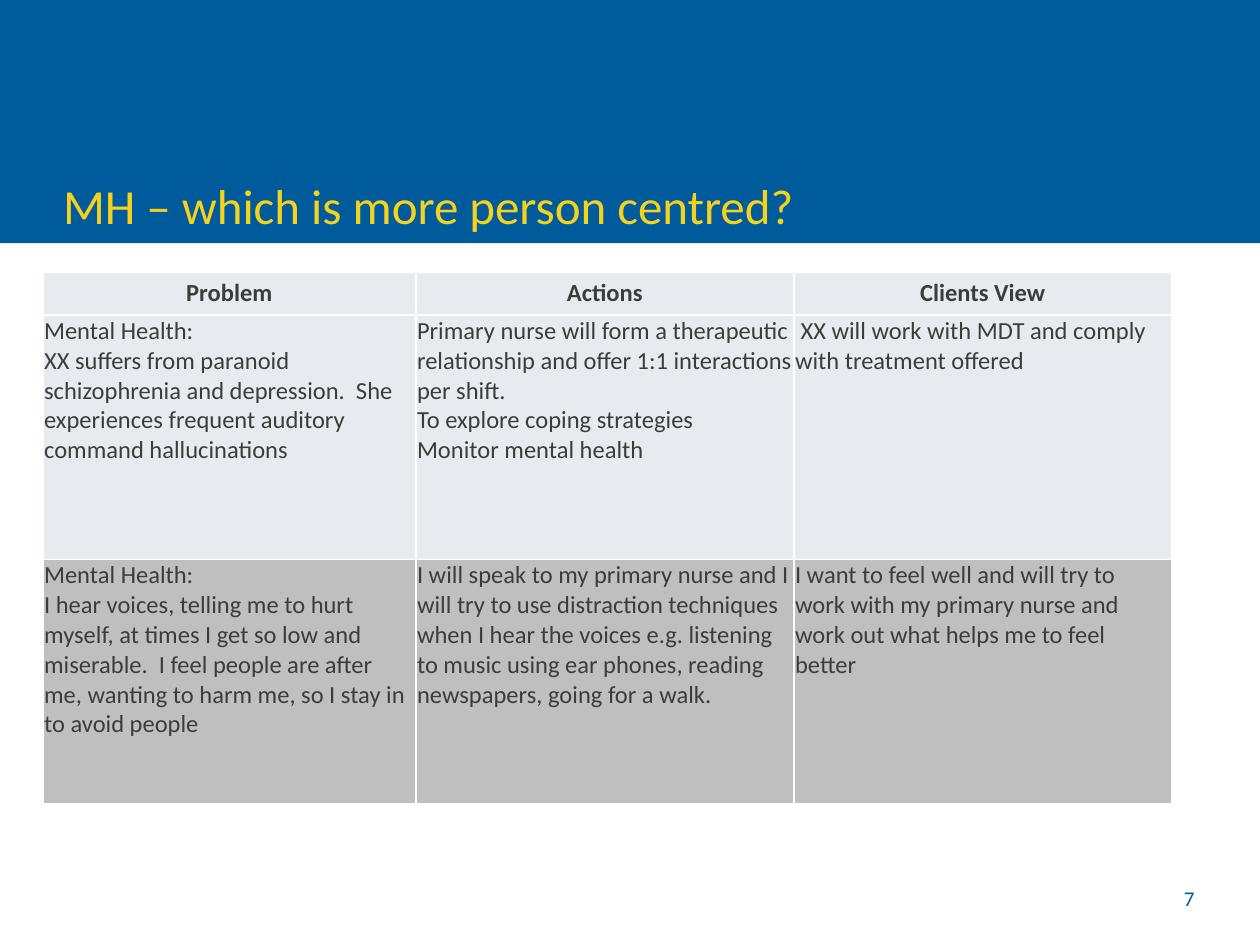
import pptx
import pptx.dml.color
import pptx.enum.shapes
import pptx.enum.text
import pptx.oxml
import pptx.util
from pptx.oxml.ns import nsdecls

Inches = pptx.util.Inches
Align = pptx.enum.text.PP_ALIGN
Anchor = pptx.enum.text.MSO_ANCHOR

BLUE, YELLOW, DARK, WHITE = "005B9C", "F6D21C", "3C3C3B", "FFFFFF"
PALE, GREY = "E7EAEF", "BFBFBF"

TITLE = "MH – which is more person centred?"
PAGE = "7"
HEADS = ["Problem", "Actions", "Clients View"]
CLINIC = [
    ["Mental Health:",
     "XX suffers from paranoid schizophrenia and depression.  She experiences "
     "frequent auditory command hallucinations"],
    ["Primary nurse will form a therapeutic relationship and offer 1:1 "
     "interactions per shift.",
     "To explore coping strategies",
     "Monitor mental health"],
    [" XX will work with MDT and comply with treatment offered"],
]
PERSON = [
    ["Mental Health:",
     "I hear voices, telling me to hurt myself, at times I get so low and "
     "miserable.  I feel people are after me, wanting to harm me, so I stay in "
     "to avoid people"],
    ["I will speak to my primary nurse and I will try to use distraction "
     "techniques when I hear the voices e.g. listening to music using ear "
     "phones, reading newspapers, going for a walk."],
    ["I want to feel well and will try to work with my primary nurse and work "
     "out what helps me to feel better"],
]
# cell texts, row height, fill, format
ROWS = [
    ([[head] for head in HEADS], 0.34, PALE, {"bold": True, "align": Align.CENTER}),
    (CLINIC, 1.94, PALE, {}),
    (PERSON, 1.94, GREY, {}),
]
WIDTHS = [2.96, 3, 3]


def color(code):
    return pptx.dml.color.RGBColor.from_string(code)


def write(frame, lines, size=14, ink=DARK, bold=False, align=Align.LEFT):
    frame.word_wrap = True
    for i, line in enumerate(lines):
        para = frame.add_paragraph() if i else frame.paragraphs[0]
        para.alignment = align
        run = para.add_run()
        run.text = line
        run.font.name, run.font.size = "Calibri", pptx.util.Pt(size)
        run.font.bold = bold
        run.font.color.rgb = color(ink)


def inset(owner, gap):
    owner.margin_left = owner.margin_right = Inches(gap)
    owner.margin_top = owner.margin_bottom = Inches(gap)


def label(slide, box, text, anchor=Anchor.TOP, **style):
    frame = slide.shapes.add_textbox(*map(Inches, box)).text_frame
    inset(frame, 0)
    frame.vertical_anchor = anchor
    write(frame, [text], **style)


def rule(cell):
    """Draw a thin white line on each side of the cell."""
    props = cell._tc.get_or_add_tcPr()
    for i, side in enumerate(("lnL", "lnR", "lnT", "lnB")):
        props.insert(i, pptx.oxml.parse_xml(
            f'<a:{side} {nsdecls("a")} w="12700"><a:solidFill>'
            f'<a:srgbClr val="{WHITE}"/></a:solidFill></a:{side}>'))


def grid(slide):
    high = sum(row[1] for row in ROWS)
    table = slide.shapes.add_table(
        len(ROWS), len(WIDTHS), Inches(0.34), Inches(2.16),
        Inches(sum(WIDTHS)), Inches(high)).table
    table.first_row = table.horz_banding = False
    for col, wide in zip(table.columns, WIDTHS):
        col.width = Inches(wide)
    for row, (texts, tall, fill, style) in zip(table.rows, ROWS):
        row.height = Inches(tall)
        for cell, lines in zip(row.cells, texts):
            inset(cell, 0.01)
            cell.vertical_anchor = Anchor.MIDDLE if style else Anchor.TOP
            cell.fill.solid()
            cell.fill.fore_color.rgb = color(fill)
            rule(cell)
            write(cell.text_frame, lines, **style)


def main():
    deck = pptx.Presentation()
    deck.slide_width, deck.slide_height = Inches(10), Inches(7.5)
    slide = deck.slides.add_slide(deck.slide_layouts[6])
    band = slide.shapes.add_shape(
        pptx.enum.shapes.MSO_SHAPE.RECTANGLE, 0, 0, Inches(10), Inches(1.93))
    band.shadow.inherit = False
    band.fill.solid()
    band.fill.fore_color.rgb = color(BLUE)
    band.line.fill.background()
    label(slide, (0.5, 1.33, 8.79, 0.59), TITLE, Anchor.MIDDLE, size=28, ink=YELLOW)
    grid(slide)
    label(slide, (7.15, 7.03, 2.33, 0.33), PAGE, size=12, ink=BLUE, align=Align.RIGHT)
    deck.save("out.pptx")


if __name__ == "__main__":
    main()
